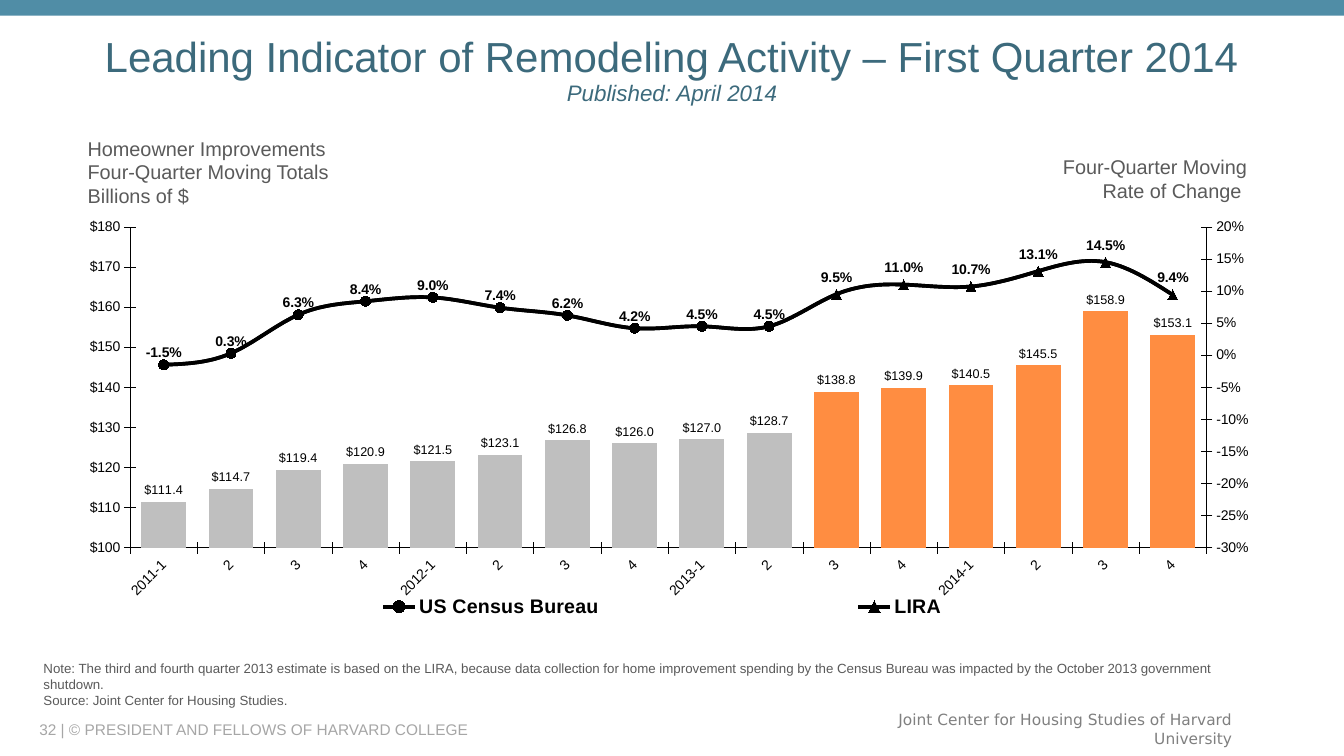
from copy import deepcopy

from pptx import Presentation, util as u
from pptx.chart.axis import ValueAxis
from pptx.chart.data import CategoryChartData
from pptx.dml.color import RGBColor
from pptx.enum import chart as ch, shapes, text
from pptx.oxml import parse_xml
from pptx.oxml.ns import nsdecls

BLACK = RGBColor(0, 0, 0)
TEAL = RGBColor(0x50, 0x8D, 0xA6)
NAVY = RGBColor(0x3C, 0x6A, 0x7C)
DARK = RGBColor(0x5A, 0x5A, 0x5A)
MID = RGBColor(0x80, 0x80, 0x80)
LIGHT = RGBColor(0xA6, 0xA6, 0xA6)
SILVER = RGBColor(0xBF, 0xBF, 0xBF)
ORANGE = RGBColor(0xFF, 0x8D, 0x41)

QUARTERS = ["2011-1", "2", "3", "4", "2012-1", "2", "3", "4",
            "2013-1", "2", "3", "4", "2014-1", "2", "3", "4"]
TOTALS = [111.4, 114.7, 119.4, 120.9, 121.5, 123.1, 126.8, 126,
          127, 128.7, 138.8, 139.9, 140.5, 145.5, 158.9, 153.1]
RATES = [-0.015, 0.003, 0.063, 0.084, 0.09, 0.074, 0.062, 0.042,
         0.045, 0.045, 0.095, 0.11, 0.107, 0.131, 0.145, 0.094]
ACTUAL, PROJECTED = range(10), range(10, 16)


def px(n):
    return u.Emu(n * 9525)


def node(xml):
    """Make a chart element from its tag, attributes and content."""
    head, mark, tail = xml.partition(">")
    slash = "/" if head.endswith("/") else ""
    return parse_xml(f"{head.rstrip('/')} {nsdecls('c')}{slash}{mark}{tail}")


def layout(x, y, w, h, inner=False):
    """Manual placement in fractions of the chart area."""
    target = '<c:layoutTarget val="inner"/>' if inner else ""
    modes = '<c:xMode val="edge"/><c:yMode val="edge"/>'
    sizes = "".join(f'<c:{k} val="{v}"/>' for k, v in zip("xywh", (x, y, w, h)))
    return node(f"<c:layout><c:manualLayout>{target}{modes}{sizes}"
                "</c:manualLayout></c:layout>")


class Page:
    face = "Arial"

    def __init__(self, deck):
        self.slide = deck.slides.add_slide(deck.slide_layouts[5])

    def font(self, font, size, color=BLACK, bold=False, face=None):
        font.name, font.size, font.bold = face or self.face, u.Pt(size), bold
        font.color.rgb = color

    def band(self, x, y, w, h, color):
        bar = self.slide.shapes.add_shape(shapes.MSO_SHAPE.RECTANGLE,
                                          px(x), px(y), px(w), px(h))
        bar.shadow.inherit = False
        bar.fill.solid()
        bar.fill.fore_color.rgb = color
        bar.line.fill.background()

    def title(self, x, y, w, h, words, sizes):
        box = self.slide.shapes.title
        box.left, box.top, box.width, box.height = map(px, (x, y, w, h))
        frame = box.text_frame
        frame.text = words
        frame.auto_size = text.MSO_AUTO_SIZE.NONE
        frame.vertical_anchor = text.MSO_ANCHOR.MIDDLE
        para = frame.paragraphs[0]
        para.alignment, para.line_spacing = text.PP_ALIGN.CENTER, 0.9
        for run, size in zip(para.runs, sizes):
            self.font(run.font, size, NAVY)
        para.runs[-1].font.italic = True

    def label(self, x, y, w, h, words, size, color, right=False, mid=False, face=None):
        box = self.slide.shapes.add_textbox(px(x), px(y), px(w), px(h))
        frame = box.text_frame
        frame.word_wrap = True
        frame.text = words
        frame.vertical_anchor = text.MSO_ANCHOR.MIDDLE if mid else text.MSO_ANCHOR.TOP
        for para in frame.paragraphs:
            para.alignment = text.PP_ALIGN.RIGHT if right else text.PP_ALIGN.LEFT
            for run in para.runs:
                self.font(run.font, size, color, face=face)

    def axis(self, axis):
        axis.has_major_gridlines = False
        axis.major_tick_mark = ch.XL_TICK_MARK.CROSS
        axis.format.line.color.rgb = BLACK
        axis.format.line.width = u.Pt(0.33)
        self.font(axis.tick_labels.font, 10)

    def scale(self, axis, low, high, step, form):
        axis.minimum_scale, axis.maximum_scale, axis.major_unit = low, high, step
        axis.tick_labels.number_format = form
        axis.tick_labels.number_format_is_linked = False

    def tags(self, series, form, place, size, bold=False):
        tags = series.data_labels
        tags.show_value = True
        tags.number_format, tags.number_format_is_linked = form, False
        tags.position = place
        self.font(tags.font, size, bold=bold)

    def curve(self, series, marker, hidden):
        """Style a smooth line, with no marker on the hidden points."""
        series.smooth = True
        series.format.line.color.rgb = BLACK
        series.format.line.width = u.Pt(2.64)
        series.marker.style, series.marker.size = marker, 7
        series.marker.format.fill.solid()
        series.marker.format.fill.fore_color.rgb = BLACK
        series.marker.format.line.color.rgb = BLACK
        for i in hidden:
            series.points[i].marker.style = ch.XL_MARKER_STYLE.NONE

    def split(self, area):
        """Move all but the first series to lines on a right-hand axis."""
        bars = area.xpath("c:barChart")[0]
        lines = node('<c:lineChart><c:grouping val="standard"/><c:varyColors val="0"/>'
                     '<c:marker val="1"/><c:axId val="7001"/><c:axId val="7002"/>'
                     "</c:lineChart>")
        bars.addnext(lines)
        for ser in bars.xpath("c:ser")[1:]:
            for flag in ser.xpath("c:invertIfNegative"):
                ser.remove(flag)
            lines.xpath("c:marker")[0].addprevious(ser)
        left = area.xpath("c:valAx")[0]
        if not left.xpath("c:crossBetween"):
            left.xpath("c:crosses")[0].addnext(node('<c:crossBetween val="between"/>'))
        right, base = deepcopy(left), deepcopy(area.xpath("c:catAx")[0])
        left.addnext(right)
        right.addnext(base)
        for axis, own, other in ((base, "7001", "7002"), (right, "7002", "7001")):
            axis.xpath("c:axId")[0].set("val", own)
            axis.xpath("c:crossAx")[0].set("val", other)
        base.xpath("c:delete")[0].set("val", "1")
        right.xpath("c:axPos")[0].set("val", "r")
        right.xpath("c:crosses")[0].set("val", "max")
        return ValueAxis(left), ValueAxis(right)

    def legend(self, chart):
        chart.has_legend = True
        key = chart.legend
        key.position = ch.XL_LEGEND_POSITION.BOTTOM
        key.include_in_layout = False
        self.font(key.font, 14, bold=True)
        root = chart.element.xpath(".//c:legend")[0]
        for old in root.xpath("c:layout"):
            root.remove(old)
        spot = root.xpath("c:legendPos")[0]
        spot.addnext(layout(0.06, 0.92, 0.87, 0.08))
        spot.addnext(node('<c:legendEntry><c:idx val="0"/><c:delete val="1"/>'
                          "</c:legendEntry>"))

    def chart(self, x, y, w, h):
        data = CategoryChartData()
        data.categories = QUARTERS
        data.add_series("Series 1", TOTALS)
        data.add_series("US Census Bureau", RATES)
        data.add_series("LIRA", RATES)
        chart = self.slide.shapes.add_chart(ch.XL_CHART_TYPE.COLUMN_CLUSTERED,
                                            px(x), px(y), px(w), px(h), data).chart
        chart.has_title = False
        self.font(chart.font, 13.2)
        self.axis(chart.category_axis)
        self.axis(chart.value_axis)
        area = chart.element.xpath(".//c:plotArea")[0]
        turn = area.xpath("c:catAx/c:txPr/a:bodyPr")[0]
        turn.set("rot", "-2700000")
        turn.set("vert", "horz")
        money, rate = self.split(area)
        self.scale(money, 100, 180, 10, r"\$#,##0")
        self.scale(rate, -0.3, 0.2, 0.05, "0%")
        for old in area.xpath("c:layout"):
            area.remove(old)
        area.insert(0, layout(0.06, 0.06, 0.88, 0.76, inner=True))

        bars, lines = chart.plots
        bars.gap_width, bars.vary_by_categories = 50, False
        total = bars.series[0]
        fills = [total.format.fill] + [total.points[i].format.fill for i in PROJECTED]
        for fill, color in zip(fills, [SILVER] + [ORANGE] * len(PROJECTED)):
            fill.solid()
            fill.fore_color.rgb = color
        self.tags(total, r"\$#,##0.0", ch.XL_LABEL_POSITION.OUTSIDE_END, 9)
        census, lira = lines.series
        self.curve(census, ch.XL_MARKER_STYLE.CIRCLE, PROJECTED)
        self.curve(lira, ch.XL_MARKER_STYLE.TRIANGLE, ACTUAL)
        self.tags(lira, "0.0%", ch.XL_LABEL_POSITION.ABOVE, 10, bold=True)
        self.legend(chart)


def main():
    deck = Presentation()
    deck.slide_width, deck.slide_height = px(1280), px(720)
    page = Page(deck)
    page.band(0, 0, 1280, 15, TEAL)
    page.title(54, 32, 1172, 72, "Leading Indicator of Remodeling Activity – First Quarter 2014"
               "\vPublished: April 2014", (30, 16))
    page.chart(54, 192, 1165, 402)
    page.label(74, 125, 368, 79, "Homeowner Improvements\nFour-Quarter Moving Totals\n"
               "Billions of $", 14.2, DARK)
    page.label(808, 143, 389, 56, "Four-Quarter Moving\nRate of Change ", 14.2, DARK, right=True)
    page.label(32, 624, 1144, 56, "Note: The third and fourth quarter 2013 estimate is based on "
               "the LIRA, because data collection for home improvement spending by the Census "
               "Bureau was impacted by the October 2013 government shutdown.\n"
               "Source: Joint Center for Housing Studies.", 9.5, DARK)
    page.label(28, 685, 760, 20, "32 | © PRESIDENT AND FELLOWS OF HARVARD COLLEGE", 11, LIGHT,
               mid=True)
    page.label(808, 680, 375, 28, "Joint Center for Housing Studies of Harvard University", 11,
               MID, right=True, mid=True, face="DejaVu Sans")
    deck.save("out.pptx")


if __name__ == "__main__":
    main()
